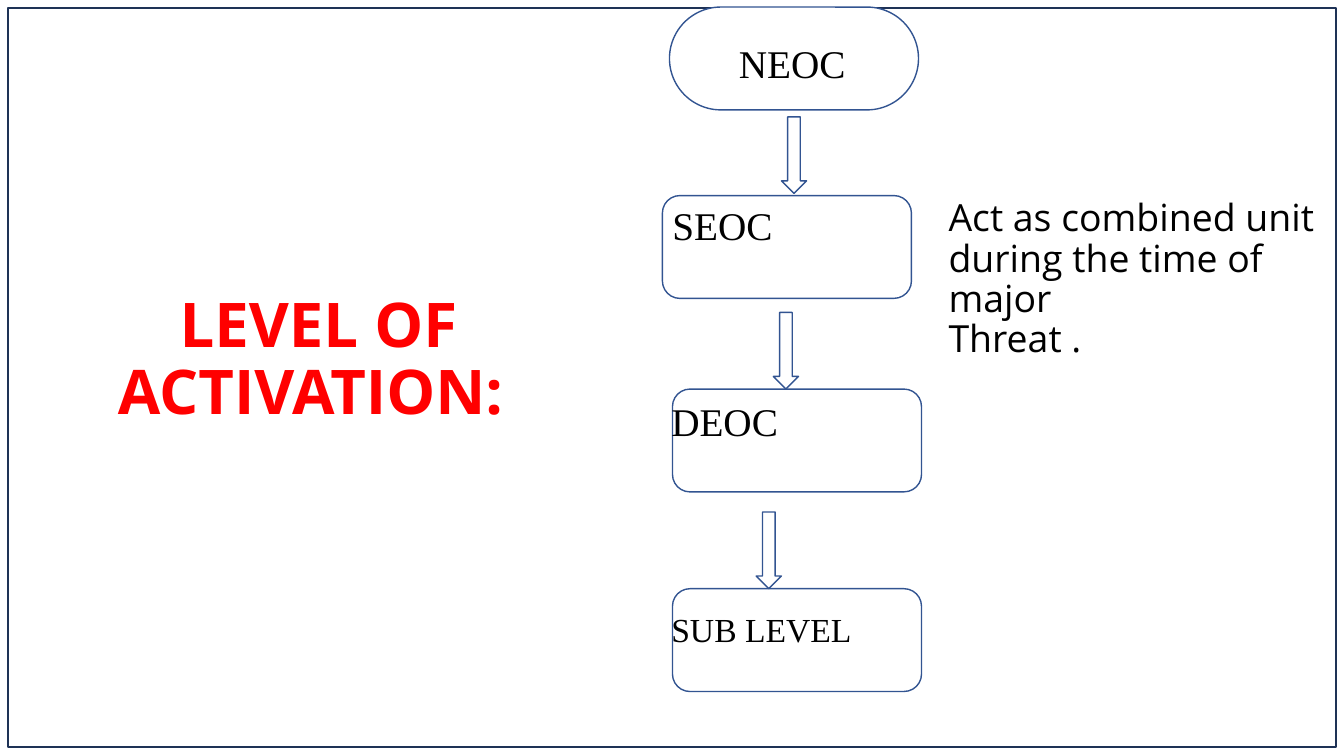
from pptx import Presentation
from pptx.dml.color import RGBColor
from pptx.enum.shapes import MSO_SHAPE
from pptx.enum.text import MSO_ANCHOR, PP_ALIGN
from pptx.util import Inches, Pt

RECT = MSO_SHAPE.RECTANGLE
ROUND = MSO_SHAPE.ROUNDED_RECTANGLE
DOWN = MSO_SHAPE.DOWN_ARROW
TOP = MSO_ANCHOR.TOP
MIDDLE = MSO_ANCHOR.MIDDLE
CENTER = PP_ALIGN.CENTER
LEFT = PP_ALIGN.LEFT

COLORS = {"white": "FFFFFF", "black": "000000", "red": "FF0000",
          "blue": "325491", "navy": "1E3256"}
SANS = "Open Sans"
SERIF = "Times New Roman"

NODE_W, NODE_H = 2.47, 1.02
ARROW_W, ARROW_H = 0.25, 0.76
NODES = [
    ("NEOC", 6.64, 0.07, 0.59, 0.27, 28, 0.5),
    ("SEOC", 6.57, 1.94, 0, 0.01, 28, 0.17),
    ("DEOC", 6.67, 3.86, -0.11, 0.03, 28, 0.17),
    ("SUB LEVEL", 6.67, 5.84, -0.11, 0.15, 24, 0.17),
]
ARROWS = [(7.75, 1.16), (7.67, 3.1), (7.5, 5.08)]


def color(name):
    return RGBColor.from_string(COLORS[name])


def draw(slide, kind, box, line, fill=None):
    shape = slide.shapes.add_shape(kind, *map(Inches, box))
    shape.shadow.inherit = False
    if fill:
        shape.fill.solid()
        shape.fill.fore_color.rgb = color(fill)
    else:
        shape.fill.background()
    shape.line.color.rgb = color(line)
    shape.line.width = Pt(1)
    return shape


def write(shape, text, size, face, ink="black", bold=False, align=LEFT,
          anchor=TOP, space=1.0):
    frame = shape.text_frame
    frame.word_wrap = True
    frame.vertical_anchor = anchor
    frame.text = text
    for para in frame.paragraphs:
        para.alignment = align
        para.line_spacing = space
        for run in para.runs:
            run.font.size = Pt(size)
            run.font.name = face
            run.font.bold = bold
            run.font.color.rgb = color(ink)


def add_title(slide, box):
    title = slide.shapes.title
    title.left, title.top, title.width, title.height = map(Inches, box)
    write(title, "LEVEL OF ACTIVATION: ", 44, SANS, "red", True, CENTER,
          MIDDLE, 0.9)


def add_node(slide, text, left, top, dx, dy, size, curve):
    node = draw(slide, ROUND, (left, top, NODE_W, NODE_H), "blue", "white")
    node.adjustments[0] = curve
    box = (left + dx, top + dy, NODE_W - dx, 0.57)
    label = slide.shapes.add_textbox(*map(Inches, box))
    write(label, text, size, SERIF)


def add_chain(slide):
    for node in NODES:
        add_node(slide, *node)
    for left, top in ARROWS:
        draw(slide, DOWN, (left, top, ARROW_W, ARROW_H), "blue")


def add_note(slide, box):
    note = slide.shapes.add_textbox(*map(Inches, box))
    write(note, "Act as combined unit during the time of major\nThreat .",
          26.7, SANS, space=0.9)


def main():
    deck = Presentation()
    deck.slide_width = Inches(13.33)
    deck.slide_height = Inches(7.5)
    slide = deck.slides.add_slide(deck.slide_layouts[5])
    draw(slide, RECT, (0.08, 0.08, 13.17, 7.33), "navy")
    add_title(slide, (0.16, 2.79, 6, 1.58))
    add_chain(slide)
    add_note(slide, (9.31, 1.93, 4, 1.9))
    deck.save("out.pptx")


if __name__ == "__main__":
    main()
